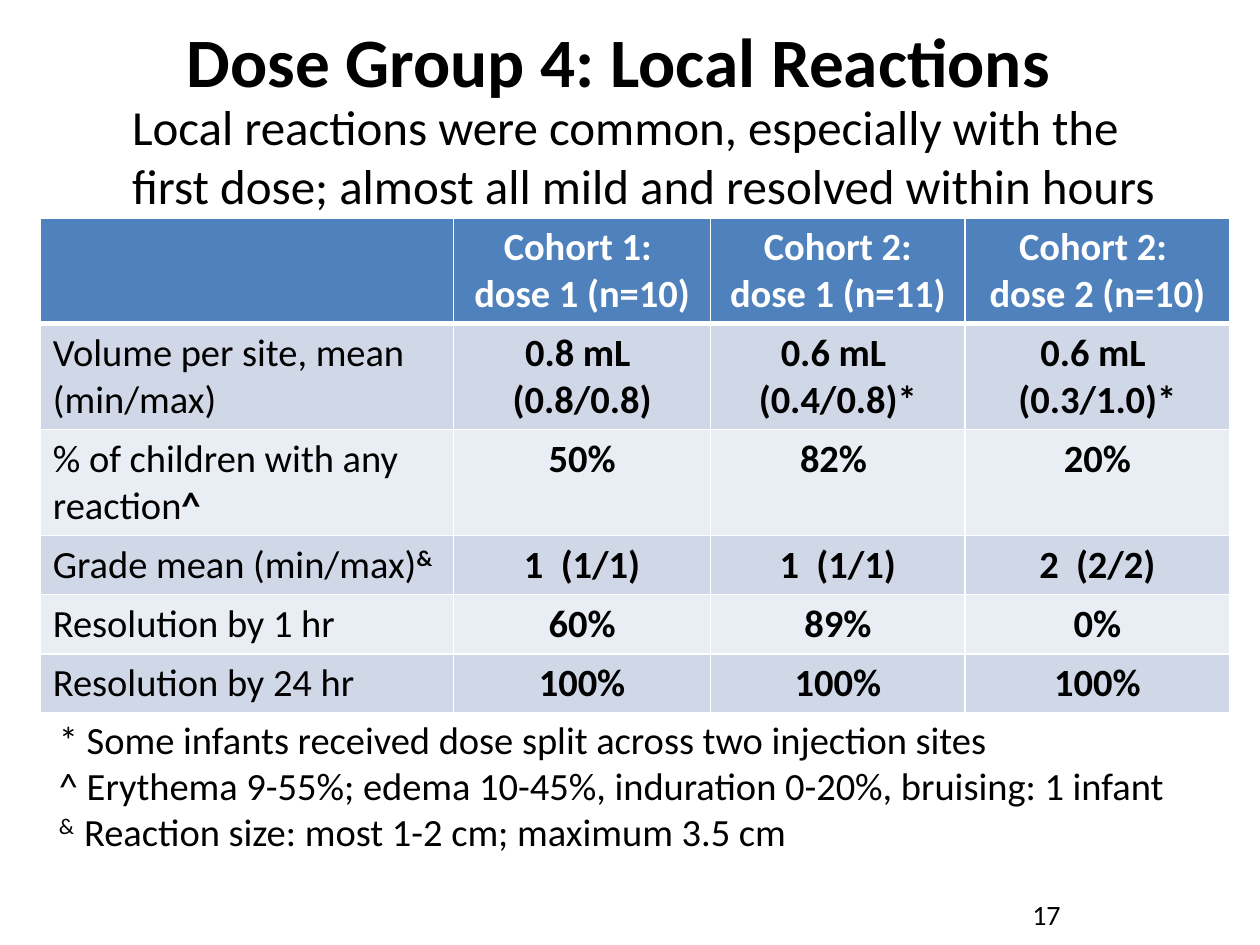
from lxml import etree
from pptx import Presentation
from pptx.dml.color import RGBColor
from pptx.enum.text import MSO_ANCHOR, PP_ALIGN
from pptx.oxml.ns import qn
from pptx.util import Inches, Pt

LEFT, CENTER = PP_ALIGN.LEFT, PP_ALIGN.CENTER
TOP, MIDDLE = MSO_ANCHOR.TOP, MSO_ANCHOR.MIDDLE

BLACK = RGBColor(0x00, 0x00, 0x00)
WHITE = RGBColor(0xFF, 0xFF, 0xFF)
HEADER_BLUE = RGBColor(0x4F, 0x81, 0xBD)
BAND_DARK = RGBColor(0xD0, 0xD8, 0xE8)
BAND_LIGHT = RGBColor(0xE9, 0xED, 0xF4)
FONT = "Calibri"

COL_WIDTHS = [3.28, 2.04, 2.02, 2.1]
ROW_HEIGHTS = [0.84, 0.84, 0.84, 0.47, 0.47, 0.47]

# Each cell is a list of paragraphs; a paragraph is a string or a list of
# (text, format) runs.
ROWS = [
    [[], ["Cohort 1: ", "dose 1 (n=10)"], ["Cohort 2: dose 1 (n=11)"],
     ["Cohort 2: ", "dose 2 (n=10)"]],
    [["Volume per site, mean  (min/max)"], ["0.8 mL ", "(0.8/0.8)"],
     ["0.6 mL ", "(0.4/0.8)*"], ["0.6 mL ", "(0.3/1.0)*"]],
    [[[("% of children with any reaction", {}), ("^", {"bold": True})]],
     ["50%"], ["82% "], ["20%"]],
    [[[("Grade mean (min/max)", {}), ("&", {"bold": True, "raised": True})]],
     ["1  (1/1)"], ["1  (1/1)"], ["2  (2/2)"]],
    [["Resolution by 1 hr"], ["60%"], ["89%"], ["0%"]],
    [["Resolution by 24 hr"], ["100%"], ["100%"], ["100%"]],
]

FOOTNOTES = [
    "* Some infants received dose split across two injection sites",
    "^ Erythema 9-55%; edema 10-45%, induration 0-20%, bruising: 1 infant",
    [("&  ", {"raised": True}), ("Reaction size: most 1-2 cm; maximum 3.5 cm", {})],
]


def add_run(p, text, size, color=BLACK, bold=False, raised=False):
    r = p.add_run()
    r.text = text
    r.font.name = FONT
    r.font.size = Pt(size)
    r.font.bold = bold
    r.font.color.rgb = color
    if raised:
        r._r.get_or_add_rPr().set("baseline", "30000")


def write(tf, paragraphs, align=LEFT, **fmt):
    for i, content in enumerate(paragraphs):
        p = tf.add_paragraph() if i else tf.paragraphs[0]
        p.alignment = align
        runs = [(content, {})] if isinstance(content, str) else content
        for text, extra in runs:
            add_run(p, text, **{**fmt, **extra})


def add_text(s, box, paragraphs, anchor=TOP, **fmt):
    tf = s.shapes.add_textbox(*map(Inches, box)).text_frame
    tf.word_wrap = True
    tf.vertical_anchor = anchor
    write(tf, paragraphs, **fmt)


def set_title(s, box, text, **fmt):
    title = s.shapes.title
    title.left, title.top, title.width, title.height = map(Inches, box)
    title.text_frame.vertical_anchor = MIDDLE
    write(title.text_frame, [text], align=CENTER, **fmt)


def set_borders(cell, bottom):
    """White cell rules; they must precede the fill in the cell properties."""
    tcPr = cell._tc.get_or_add_tcPr()
    for i, (side, width) in enumerate(
            [("lnL", 1), ("lnR", 1), ("lnT", 1), ("lnB", bottom)]):
        ln = etree.Element(qn("a:" + side), w=str(Pt(width)))
        fill = etree.SubElement(ln, qn("a:solidFill"))
        etree.SubElement(fill, qn("a:srgbClr"), val=str(WHITE))
        tcPr.insert(i, ln)


def add_reaction_table(s, left, top):
    table = s.shapes.add_table(
        len(ROWS), len(COL_WIDTHS), Inches(left), Inches(top),
        Inches(sum(COL_WIDTHS)), Inches(sum(ROW_HEIGHTS))).table
    for col, width in zip(table.columns, COL_WIDTHS):
        col.width = Inches(width)
    for row, height in zip(table.rows, ROW_HEIGHTS):
        row.height = Inches(height)
    for i, row in enumerate(ROWS):
        header = i == 0
        band = HEADER_BLUE if header else BAND_DARK if i % 2 else BAND_LIGHT
        for j, paragraphs in enumerate(row):
            cell = table.cell(i, j)
            cell.fill.solid()
            cell.fill.fore_color.rgb = band
            # Header rule is thicker; the row below shares that edge
            set_borders(cell, bottom=3 if header else 1)
            write(cell.text_frame, paragraphs, align=CENTER if j else LEFT,
                  size=22, color=WHITE if header else BLACK,
                  bold=header or j > 0)


def main():
    prs = Presentation()
    prs.slide_width, prs.slide_height = Inches(10), Inches(7.5)
    s = prs.slides.add_slide(prs.slide_layouts[5])

    # Title and key message
    set_title(s, (0.41, 0.09, 9, 0.77), "Dose Group 4: Local Reactions",
              size=39.6, bold=True)
    add_text(s, (0.95, 0.72, 8.64, 1.04),
             ["Local reactions were common, especially with the first dose; "
              "almost all mild and resolved within hours"], size=28)

    # Results and footnotes
    add_reaction_table(s, 0.32, 1.73)
    add_text(s, (0.37, 5.63, 9.26, 1.21), FOOTNOTES, size=22)

    # Page number
    add_text(s, (7.93, 7.06, 0.75, 0.4), ["17"], anchor=MIDDLE, align=CENTER,
             size=16)
    prs.save("out.pptx")


if __name__ == "__main__":
    main()
